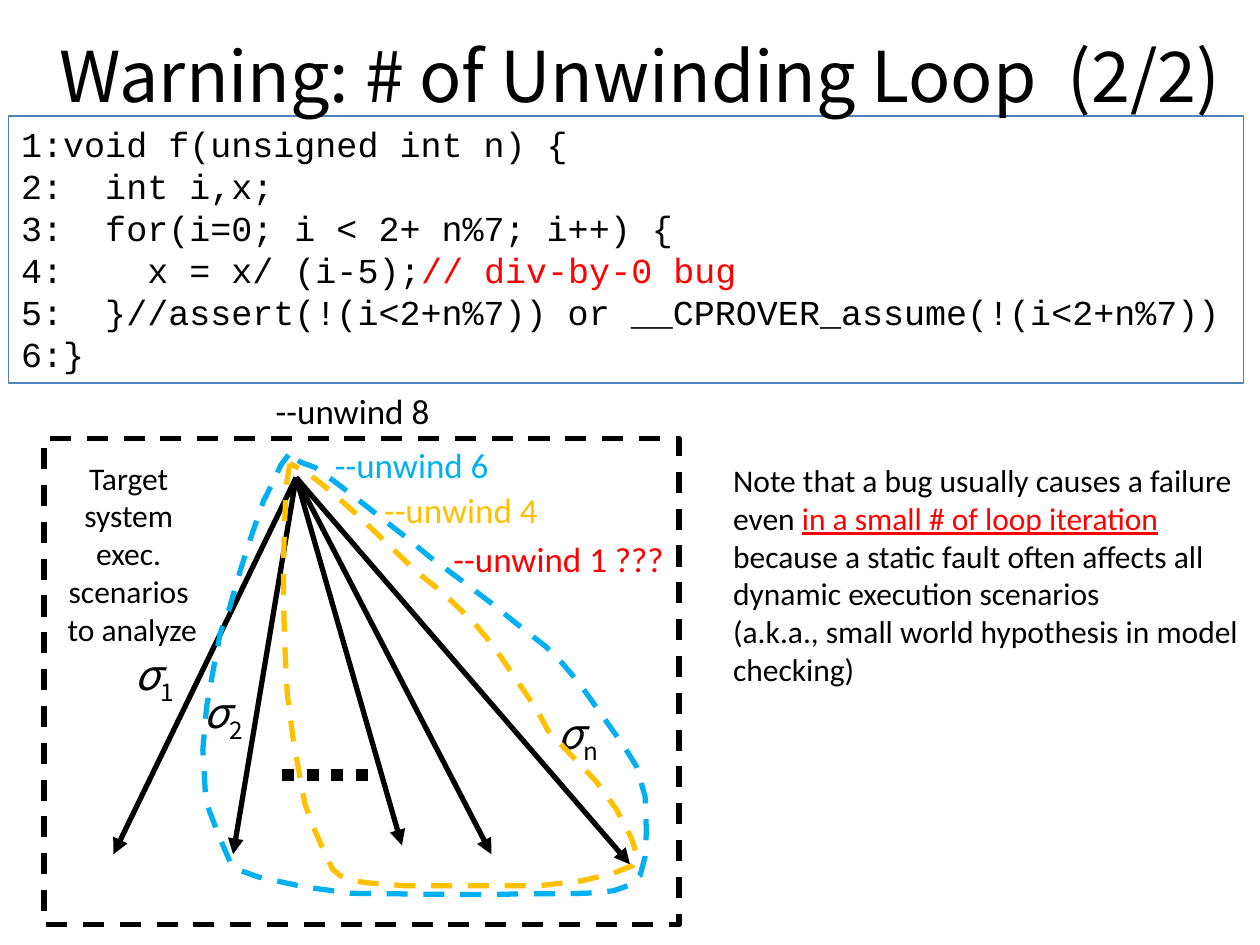
import dataclasses

import pptx
import pptx.dml.color
import pptx.enum.dml
import pptx.enum.shapes
import pptx.enum.text
import pptx.oxml.ns
import pptx.util
from lxml import etree

Inches = pptx.util.Inches
Pt = pptx.util.Pt
DASH = pptx.enum.dml.MSO_LINE
ALIGN = pptx.enum.text.PP_ALIGN
ANCHOR = pptx.enum.text.MSO_ANCHOR


@dataclasses.dataclass(frozen=True)
class Theme:
    black: str = "000000"
    red: str = "FF0000"
    blue: str = "00B0F0"
    orange: str = "FFC000"
    frame: str = "4F81BD"
    body_font: str = "Calibri"
    code_font: str = "Courier New"
    title_font: str = "Noto Sans CJK KR"
    title_size: int = 40
    symbol_size: int = 24
    label_size: int = 20
    note_size: int = 18
    thin: float = 0.75
    stroke: float = 3
    dots: float = 7


class Page:
    def __init__(self, slide, theme):
        self.shapes = slide.shapes
        self.theme = theme

    def style_line(self, line, color, width, dash=None):
        line.color.rgb = pptx.dml.color.RGBColor.from_string(color)
        line.width = Pt(width)
        if dash is not None:
            line.dash_style = dash

    def connector(self, start, end, width, dash=None, arrow=False):
        link = self.shapes.add_connector(
            pptx.enum.shapes.MSO_CONNECTOR.STRAIGHT, *map(Inches, start + end))
        self.style_line(link.line, self.theme.black, width, dash)
        properties = link._element.spPr
        if arrow:
            outline = properties.find(pptx.oxml.ns.qn("a:ln"))
            head = etree.SubElement(outline, pptx.oxml.ns.qn("a:tailEnd"))
            head.set("type", "triangle")
        etree.SubElement(properties, pptx.oxml.ns.qn("a:effectLst"))

    def rectangle(self, place, color, width, dash=None):
        box = self.shapes.add_shape(
            pptx.enum.shapes.MSO_SHAPE.RECTANGLE, *map(Inches, place))
        box.shadow.inherit = False
        box.fill.background()
        self.style_line(box.line, color, width, dash)
        return box

    def outline(self, points, color):
        """Draw a closed dashed loop through the points."""
        corners = [(Inches(x), Inches(y)) for x, y in points]
        builder = self.shapes.build_freeform(*corners[0])
        builder.add_line_segments(corners[1:], close=True)
        loop = builder.convert_to_shape()
        loop.shadow.inherit = False
        loop.fill.background()
        self.style_line(loop.line, color, self.theme.stroke, DASH.DASH)

    def text(self, place, paras, size, **options):
        box = self.shapes.add_textbox(*map(Inches, place))
        self.fill_text(box, paras, size, **options)

    def fill_text(self, box, paras, size, font=None, color=None, wrap=True,
                  align=ALIGN.LEFT, anchor=ANCHOR.TOP, before=0):
        """Fill a box; each para is a list of (text, format values) spans."""
        frame = box.text_frame
        frame.word_wrap = wrap
        frame.vertical_anchor = anchor
        base = {"name": font or self.theme.body_font, "size": Pt(size),
                "color": color or self.theme.black}
        for index, spans in enumerate(paras):
            para = frame.add_paragraph() if index else frame.paragraphs[0]
            para.alignment = align
            para.space_before = Pt(before)
            for words, changes in spans:
                for row, line in enumerate(words.split("\n")):
                    if row:
                        para.add_line_break()
                    self.span(para, line, base | changes)

    def span(self, para, words, values):
        span = para.add_run()
        span.text = words
        for name, value in values.items():
            if name == "color":
                span.font.color.rgb = pptx.dml.color.RGBColor.from_string(value)
            elif name == "baseline":
                span._r.get_or_add_rPr().set("baseline", str(value))
            else:
                setattr(span.font, name, value)


def plain(*lines):
    return [[(line, {})] for line in lines]


SCENARIO_ROOT = (2.35, 3.79)
SCENARIO_ENDS = [(0.9, 6.78), (1.85, 6.78), (3.9, 6.78), (3.19, 6.71), (5, 6.86)]
SYMBOLS = [("1", 0.97, 5.1), ("2", 1.52, 5.4), ("n", 4.33, 5.57)]
UNWIND_6_LOOP = [
    (2.29, 3.61), (2.23, 3.69), (2.17, 3.82), (2.09, 3.98), (2, 4.24), (1.91, 4.52),
    (1.82, 4.83), (1.75, 5.02), (1.69, 5.33), (1.64, 5.61), (1.61, 5.95), (1.63, 6.29),
    (1.66, 6.43), (1.74, 6.64), (1.83, 6.85), (1.91, 6.91), (2.05, 6.96), (2.42, 7.04),
    (2.79, 7.09), (3.69, 7.1), (4.65, 7.09), (4.87, 7.07), (5.01, 7.02), (5.08, 6.95),
    (5.12, 6.8), (5.13, 6.6), (5.12, 6.32), (5.05, 6.08), (4.95, 5.92), (4.83, 5.75),
    (4.61, 5.44), (4.46, 5.26), (4.33, 5.13), (4.15, 4.99), (3.89, 4.78), (3.64, 4.59),
    (3.41, 4.42), (3.23, 4.27), (3.05, 4.13), (2.81, 3.94), (2.64, 3.81), (2.5, 3.71),
    (2.39, 3.67)]
UNWIND_4_LOOP = [
    (2.3, 3.68), (2.27, 3.87), (2.26, 4.12), (2.25, 4.45), (2.25, 4.75), (2.26, 5.12),
    (2.28, 5.51), (2.33, 5.89), (2.42, 6.38), (2.49, 6.57), (2.56, 6.73), (2.64, 6.9),
    (2.7, 6.95), (2.79, 6.99), (2.95, 7.01), (3.22, 7.03), (4.28, 7.03), (4.62, 6.99),
    (4.87, 6.93), (5.02, 6.87), (5.06, 6.8), (5.01, 6.65), (4.89, 6.42), (4.73, 6.2),
    (4.35, 5.8), (4.27, 5.65), (4.17, 5.5), (3.98, 5.22), (3.86, 5.06), (3.76, 4.94),
    (3.51, 4.7), (3.32, 4.55), (3.1, 4.34), (2.84, 4.09), (2.67, 3.94), (2.54, 3.83),
    (2.42, 3.74)]
CODE = plain(
    "1:void f(unsigned int n) {",
    "2:  int i,x;",
    "3:  for(i=0; i < 2+ n%7; i++) {",
    "4:    x = x/ (i-5);",
    "5:  }//assert(!(i<2+n%7)) or __CPROVER_assume(!(i<2+n%7))",
    "6:}")


def draw_scenarios(page):
    theme = page.theme
    for end in SCENARIO_ENDS:
        page.connector(SCENARIO_ROOT, end, theme.stroke, arrow=True)
    for index, left, top in SYMBOLS:
        page.text((left, top, 0.67, 0.4),
                  [[("σ", {"italic": True}), (index, {"baseline": -25000})]],
                  theme.symbol_size, font=theme.title_font, before=4.8)
    page.connector((2.24, 6.15), (2.94, 6.15), theme.dots, DASH.ROUND_DOT)
    page.rectangle((0.35, 3.48, 5.04, 3.86), theme.black, theme.stroke, DASH.DASH)
    page.outline(UNWIND_6_LOOP, theme.blue)
    page.outline(UNWIND_4_LOOP, theme.orange)
    labels = [("8", 2.09, 3.04, 1.43, theme.black), ("6", 2.56, 3.47, 1.43, theme.blue),
              ("4", 2.95, 3.83, 1.43, theme.orange), ("1 ???", 3.5, 4.22, 1.88, theme.red)]
    for bound, left, top, width, color in labels:
        page.text((left, top, width, 0.44), plain(f"--unwind {bound}"),
                  theme.label_size, color=color, wrap=False)
    page.text((0.43, 3.59, 1.24, 1.62),
              plain("Target \nsystem ", "exec. \nscenarios \nto analyze"),
              theme.note_size, align=ALIGN.CENTER)


def main():
    deck = pptx.Presentation()
    deck.slide_width, deck.slide_height = Inches(10), Inches(7.5)
    theme = Theme()
    page = Page(deck.slides.add_slide(deck.slide_layouts[6]), theme)
    draw_scenarios(page)

    CODE[3].append(("// div-by-0 bug", {"color": theme.red}))
    code_box = page.rectangle((0.07, 0.92, 9.8, 2.12), theme.frame, theme.thin)
    page.fill_text(code_box, CODE, theme.label_size, font=theme.code_font)
    page.text((0.28, -0.03, 9.6, 1.25), plain("Warning: # of Unwinding Loop  (2/2)"),
              theme.title_size, font=theme.title_font, align=ALIGN.CENTER,
              anchor=ANCHOR.MIDDLE)
    page.text((5.72, 3.61, 4.28, 1.92), [
        [("Note that a bug usually causes a failure even ", {}),
         ("in a small # of loop iteration ", {"color": theme.red, "underline": True}),
         ("because a static fault often affects all dynamic execution scenarios", {})],
        [("(a.k.a., small world hypothesis in model checking)", {})]], theme.note_size)
    deck.save("out.pptx")


if __name__ == "__main__":
    main()
